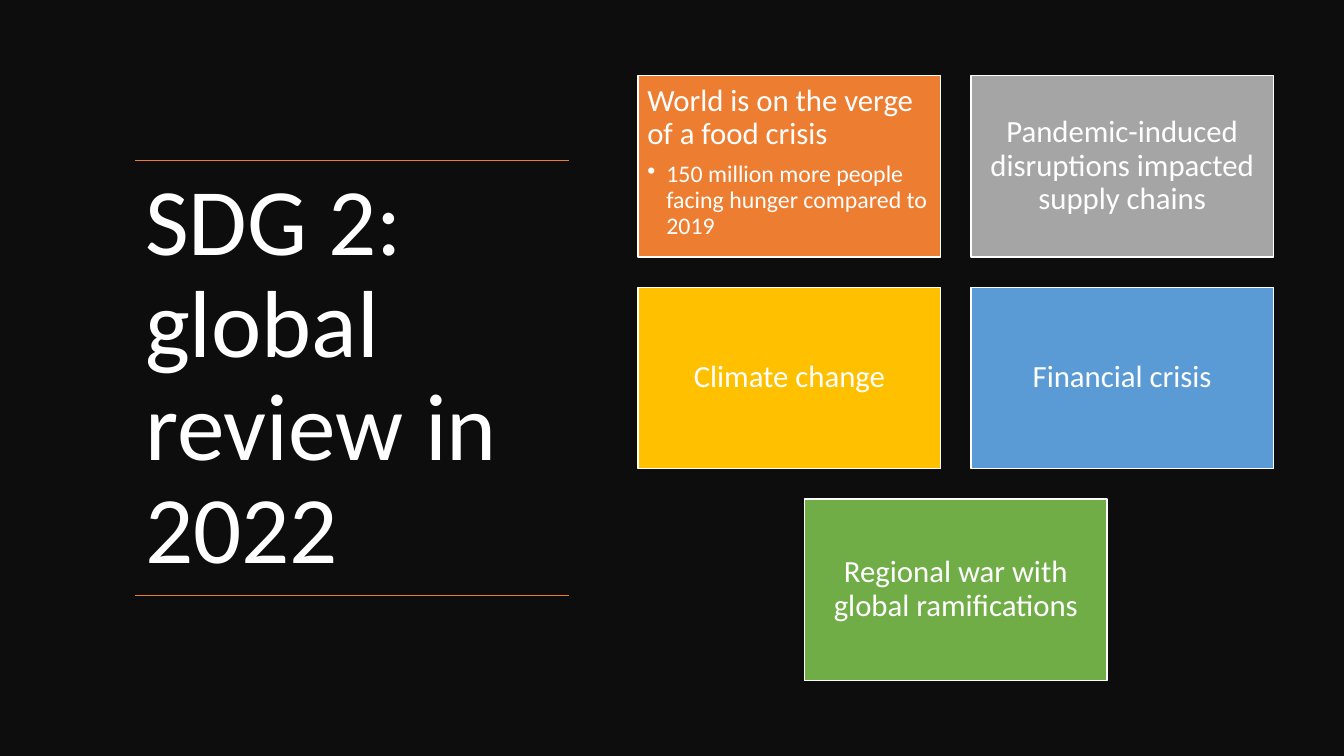
"""Build the SDG 2 global review slide."""
from lxml.etree import SubElement
from pptx import Presentation
from pptx.dml.color import RGBColor
from pptx.enum.shapes import MSO_CONNECTOR as Connector, MSO_SHAPE as Shape
from pptx.enum.text import MSO_ANCHOR as Anchor, PP_ALIGN as Align
from pptx.oxml.ns import qn
from pptx.util import Inches, Pt


def color(hex_code):
    return RGBColor.from_string(hex_code)


def style(paragraph, size, align=Align.LEFT, after=0):
    paragraph.font.name = "Calibri"
    paragraph.font.size = Pt(size)
    paragraph.font.color.rgb = color("FFFFFF")
    paragraph.alignment = align
    paragraph.line_spacing = 0.9
    paragraph.space_after = Pt(after)


deck = Presentation()
deck.slide_width, deck.slide_height = Inches(13.33), Inches(7.5)
slide = deck.slides.add_slide(deck.slide_layouts[6])

backdrop = slide.shapes.add_shape(Shape.RECTANGLE, 0, 0, deck.slide_width, deck.slide_height)
backdrop.shadow.inherit = False
backdrop.fill.solid()
backdrop.fill.fore_color.rgb = color("0D0D0D")
backdrop.line.fill.background()

title = slide.shapes.add_textbox(Inches(1.34), Inches(1.59), Inches(4.3), Inches(4.33)).text_frame
title.word_wrap = True
title.vertical_anchor = Anchor.MIDDLE
title.text = "SDG 2: global review in 2022"
style(title.paragraphs[0], 68)

for rule_y in (1.59, 5.91):
    rule = slide.shapes.add_connector(
        Connector.STRAIGHT, Inches(5.64), Inches(rule_y), Inches(1.34), Inches(rule_y))
    rule.line.color.rgb = color("ED7D31")
    rule.line.width = Pt(1)
    SubElement(rule._element.spPr, qn("a:effectLst"))

causes = [
    ("World is on the verge of a food crisis", "ED7D31",
     "150 million more people facing hunger compared to 2019"),
    ("Pandemic-induced disruptions impacted supply chains", "A5A5A5", None),
    ("Climate change", "FFC000", None),
    ("Financial crisis", "5B9BD5", None),
    ("Regional war with global ramifications", "70AD47", None),
]
card_width, card_height, gap = 3, 1.8, 0.3
columns = 2
for index, (cause, fill, detail) in enumerate(causes):
    row, column = divmod(index, columns)
    cards_in_row = min(columns, len(causes) - row * columns)
    column += (columns - cards_in_row) / 2
    card = slide.shapes.add_shape(
        Shape.RECTANGLE,
        Inches(6.33 + column * (card_width + gap)), Inches(0.75 + row * (card_height + gap)),
        Inches(card_width), Inches(card_height))
    card.shadow.inherit = False
    card.fill.solid()
    card.fill.fore_color.rgb = color(fill)
    card.line.color.rgb = color("FFFFFF")
    card.line.width = Pt(1)

    label = card.text_frame
    label.word_wrap = True
    label.margin_left = label.margin_right = Inches(0.09)
    label.margin_top = label.margin_bottom = Inches(0.09)
    label.vertical_anchor = Anchor.TOP if detail else Anchor.MIDDLE
    label.text = cause
    style(label.paragraphs[0], 22, Align.LEFT if detail else Align.CENTER, after=8)

    if detail:
        bullet = label.add_paragraph()
        bullet.text = detail
        bullet.level = 1
        style(bullet, 17, after=3)
        properties = bullet._p.get_or_add_pPr()
        properties.set("marL", str(Inches(0.19)))
        properties.set("indent", str(Inches(-0.19)))
        mark = properties.makeelement(qn("a:buChar"), {"char": "•"})
        properties.insert_element_before(mark, "a:tabLst", "a:defRPr", "a:extLst")

deck.save("out.pptx")
